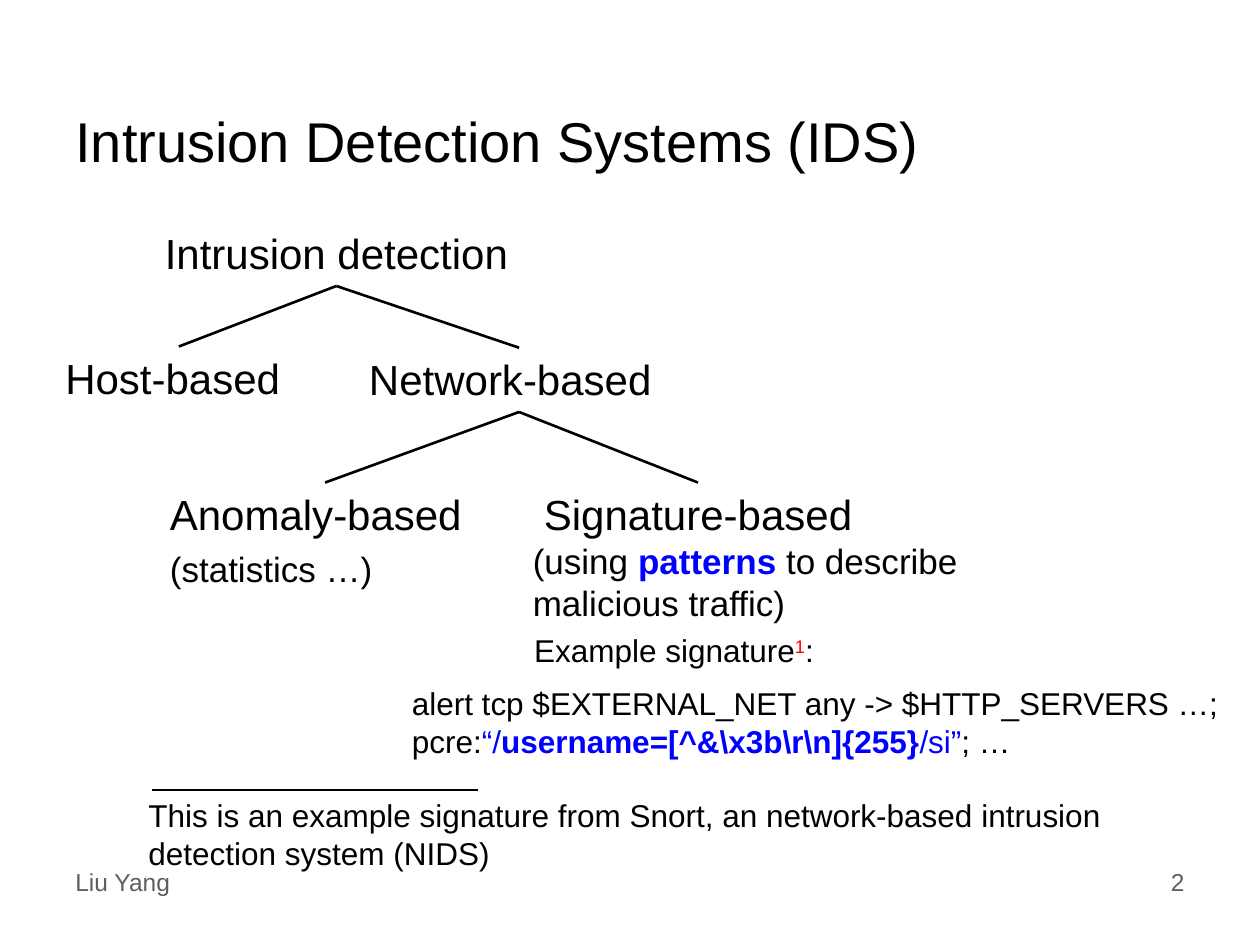
from lxml.etree import SubElement
from pptx import Presentation
from pptx.dml.color import RGBColor
from pptx.enum.shapes import MSO_CONNECTOR
from pptx.enum.text import MSO_ANCHOR, PP_ALIGN
from pptx.oxml.ns import qn
from pptx.util import Inches, Pt

BLACK = RGBColor(0x00, 0x00, 0x00)
BLUE = RGBColor(0x00, 0x00, 0xFF)
RED = RGBColor(0xFF, 0x00, 0x00)
GRAY = RGBColor(0x5F, 0x5F, 0x5F)

presentation = Presentation()
presentation.slide_width = Inches(10)
presentation.slide_height = Inches(7.5)
slide = presentation.slides.add_slide(presentation.slide_layouts[6])


def add_text(left, top, width, height, size, parts,
             alignment=PP_ALIGN.LEFT, anchor=MSO_ANCHOR.TOP):
    """Add one paragraph made of (text, color, bold) parts."""
    box = slide.shapes.add_textbox(
        Inches(left), Inches(top), Inches(width), Inches(height))
    text_frame = box.text_frame
    text_frame.word_wrap = True
    text_frame.vertical_anchor = anchor
    paragraph = text_frame.paragraphs[0]
    paragraph.alignment = alignment
    for text, color, bold in parts:
        run = paragraph.add_run()
        run.text = text
        run.font.name = "Arial"
        run.font.size = Pt(size)
        run.font.bold = bold
        run.font.color.rgb = color
    return paragraph


def add_line(start, end):
    """Add a plain black line between two points."""
    line = slide.shapes.add_connector(
        MSO_CONNECTOR.STRAIGHT, *map(Inches, start + end))
    line.line.color.rgb = BLACK
    line.line.width = Pt(1.5)
    SubElement(line._element.spPr, qn("a:effectLst"))


# Title
add_text(0.5, 0.67, 9, 0.88, 32,
         [("Intrusion Detection Systems (IDS)", BLACK, False)],
         anchor=MSO_ANCHOR.MIDDLE)

# Tree labels
for text, left, top, width, alignment in [
    ("Intrusion detection", 1.17, 1.76, 3, PP_ALIGN.CENTER),
    ("Host-based", 0.42, 2.75, 2, PP_ALIGN.LEFT),
    ("Network-based", 2.83, 2.76, 2.58, PP_ALIGN.LEFT),
    ("Anomaly-based", 1.25, 3.83, 2.67, PP_ALIGN.LEFT),
    ("Signature-based", 4, 3.83, 3.08, PP_ALIGN.CENTER),
]:
    add_text(left, top, width, 0.5, 24, [(text, BLACK, False)], alignment)

# Tree branches
for parent, children in [
    ((2.67, 2.27), [(1.42, 2.75), (4.12, 2.76)]),
    ((4.12, 3.27), [(2.58, 3.83), (5.54, 3.83)]),
]:
    for child in children:
        add_line(parent, child)

# Explanations under the leaves
add_text(1.25, 4.3, 2.25, 0.44, 20, [("(statistics …)", BLACK, False)])
add_text(4.13, 4.23, 3.58, 0.77, 20, [
    ("(using ", BLACK, False),
    ("patterns", BLUE, True),
    (" to describe malicious traffic)", BLACK, False),
])

# Example signature
heading = add_text(4.14, 4.96, 2.58, 0.4, 18, [
    ("Example signature", BLACK, False),
    ("1", RED, False),
    (":", BLACK, False),
])
heading.runs[1]._r.get_or_add_rPr().set("baseline", "30000")
add_text(3.17, 5.38, 6.67, 0.71, 18, [
    ("alert tcp $EXTERNAL_NET any -> $HTTP_SERVERS …; pcre:", BLACK, False),
    ("“/", BLUE, False),
    (r"username=[^&\x3b\r\n]{255}", BLUE, True),
    ("/si”", BLUE, False),
    ("; …", BLACK, False),
])

# Footnote
add_line((1.21, 6.27), (3.79, 6.27))
add_text(1.08, 6.27, 7.92, 0.71, 18, [
    ("This is an example signature from Snort, an network-based intrusion "
     "detection system (NIDS)", BLACK, False),
])

# Footer and slide number
add_text(0.5, 6.83, 2.5, 0.33, 14, [("Liu Yang", GRAY, False)])
add_text(7.17, 6.83, 2.33, 0.52, 14, [("2", GRAY, False)], PP_ALIGN.RIGHT)

presentation.save("out.pptx")
